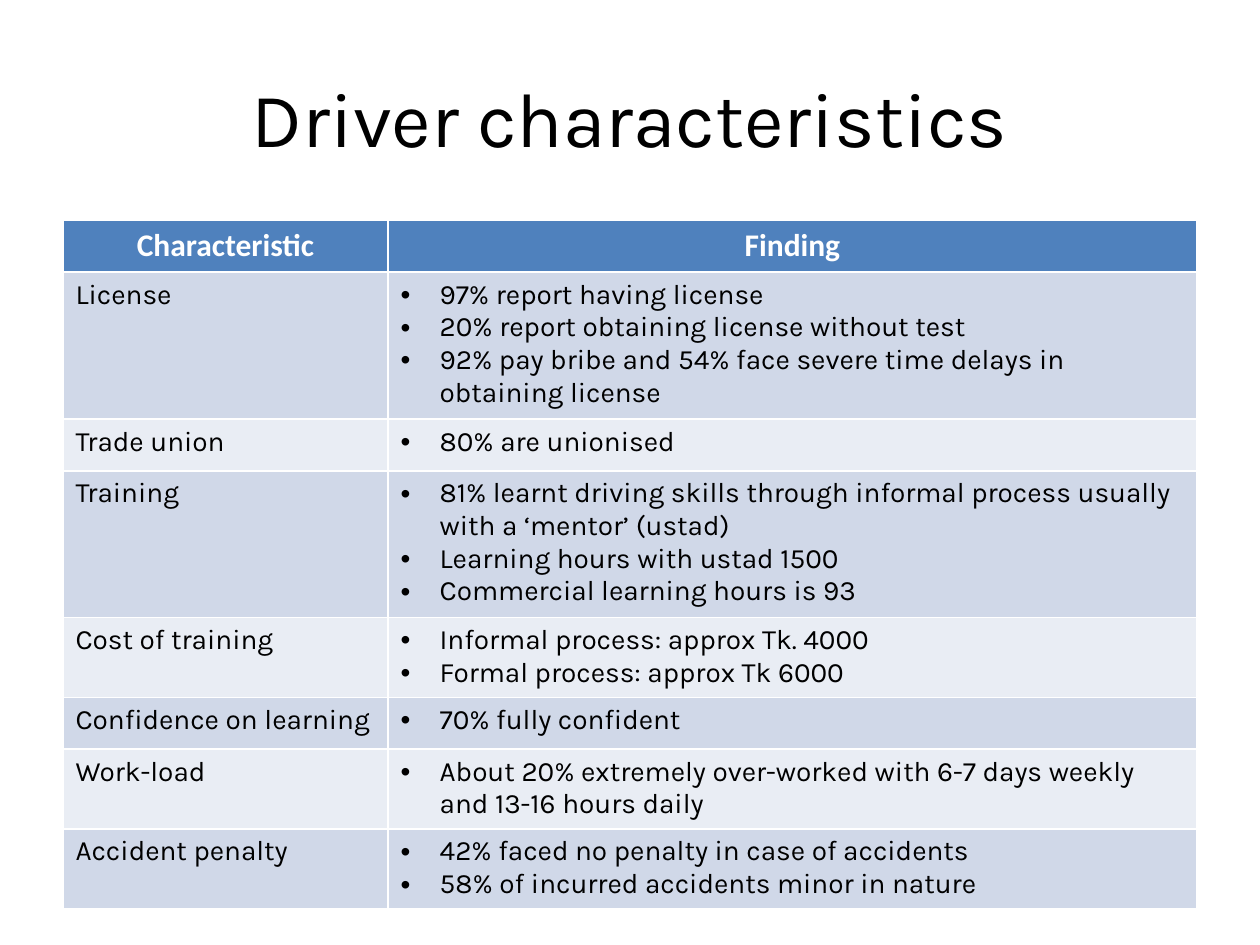
from pptx import Presentation
from pptx.dml.color import RGBColor
from pptx.enum.text import MSO_ANCHOR as Anchor, PP_ALIGN as Align
from pptx.oxml.ns import qn
from pptx.util import Inches, Pt
from lxml.etree import SubElement

TITLE = "Driver characteristics"
HEADS = ["Characteristic", "Finding"]
WIDTHS = [2.58, 6.42]
ROWS = [
    ("License", 4, [
        "97% report having license",
        "20% report obtaining license without test",
        "92% pay bribe and 54% face severe time delays in obtaining license",
    ]),
    ("Trade union", 1, ["80% are unionised"]),
    ("Training", 4, [
        "81% learnt driving skills through informal process usually with a ‘mentor’ (ustad)",
        "Learning hours with ustad 1500",
        "Commercial learning hours is 93",
    ]),
    ("Cost of training", 2, [
        "Informal process: approx Tk. 4000",
        "Formal process: approx Tk 6000",
    ]),
    ("Confidence on learning", 1, ["70% fully confident"]),
    ("Work-load", 2, [
        "About 20% extremely over-worked with 6-7 days weekly and 13-16 hours daily",
    ]),
    ("Accident penalty", 2, [
        "42% faced no penalty in case of accidents",
        "58% of incurred accidents minor in nature",
    ]),
]
BLUE, WHITE, BLACK = "4F81BD", "FFFFFF", "000000"
BANDS = ["D0D8E8", "E9EDF4"]
LEFT, TOP, WIDE = 0.5, 1.75, 9
HEAD_H, LINE_H, PAD = 0.41, 0.26, 0.1


def color(code):
    return RGBColor.from_string(code)


def write(frame, lines, size, face="Karla", ink=BLACK, bold=False, align=Align.LEFT):
    frame.text = "\n".join(lines)
    for para in frame.paragraphs:
        para.alignment = align
        font = para.font
        font.name, font.size, font.bold = face, Pt(size), bold
        font.color.rgb = color(ink)


def paint(cell, code):
    cell.fill.solid()
    cell.fill.fore_color.rgb = color(code)


def bullet(para):
    props = para._p.get_or_add_pPr()
    props.set("marL", str(Inches(0.31)))
    props.set("indent", str(Inches(-0.31)))
    SubElement(props, qn("a:buFont")).set("typeface", "Arial")
    SubElement(props, qn("a:buChar")).set("char", "•")
    props.append(props.find(qn("a:defRPr")))


def main():
    deck = Presentation()
    deck.slide_width, deck.slide_height = Inches(10), Inches(7.5)
    slide = deck.slides.add_slide(deck.slide_layouts[6])

    box = slide.shapes.add_textbox(Inches(LEFT), Inches(0.3), Inches(WIDE), Inches(1.25))
    frame = box.text_frame
    frame.word_wrap = True
    frame.vertical_anchor = Anchor.MIDDLE
    write(frame, [TITLE], 44, align=Align.CENTER)

    highs = [HEAD_H] + [max(HEAD_H, PAD + LINE_H * count) for _, count, _ in ROWS]
    table = slide.shapes.add_table(
        len(highs), len(WIDTHS), Inches(LEFT), Inches(TOP), Inches(WIDE), Inches(sum(highs))
    ).table
    for col, width in zip(table.columns, WIDTHS):
        col.width = Inches(width)
    for row, high in zip(table.rows, highs):
        row.height = Inches(high)

    for cell, head in zip(table.rows[0].cells, HEADS):
        write(cell.text_frame, [head], 18, "Calibri", WHITE, True, Align.CENTER)
        paint(cell, BLUE)
    for i, (name, _, facts) in enumerate(ROWS):
        label, body = table.rows[i + 1].cells
        write(label.text_frame, [name], 16)
        write(body.text_frame, facts, 16)
        for para in body.text_frame.paragraphs:
            bullet(para)
        for cell in (label, body):
            paint(cell, BANDS[i % 2])

    deck.save("out.pptx")


if __name__ == "__main__":
    main()
